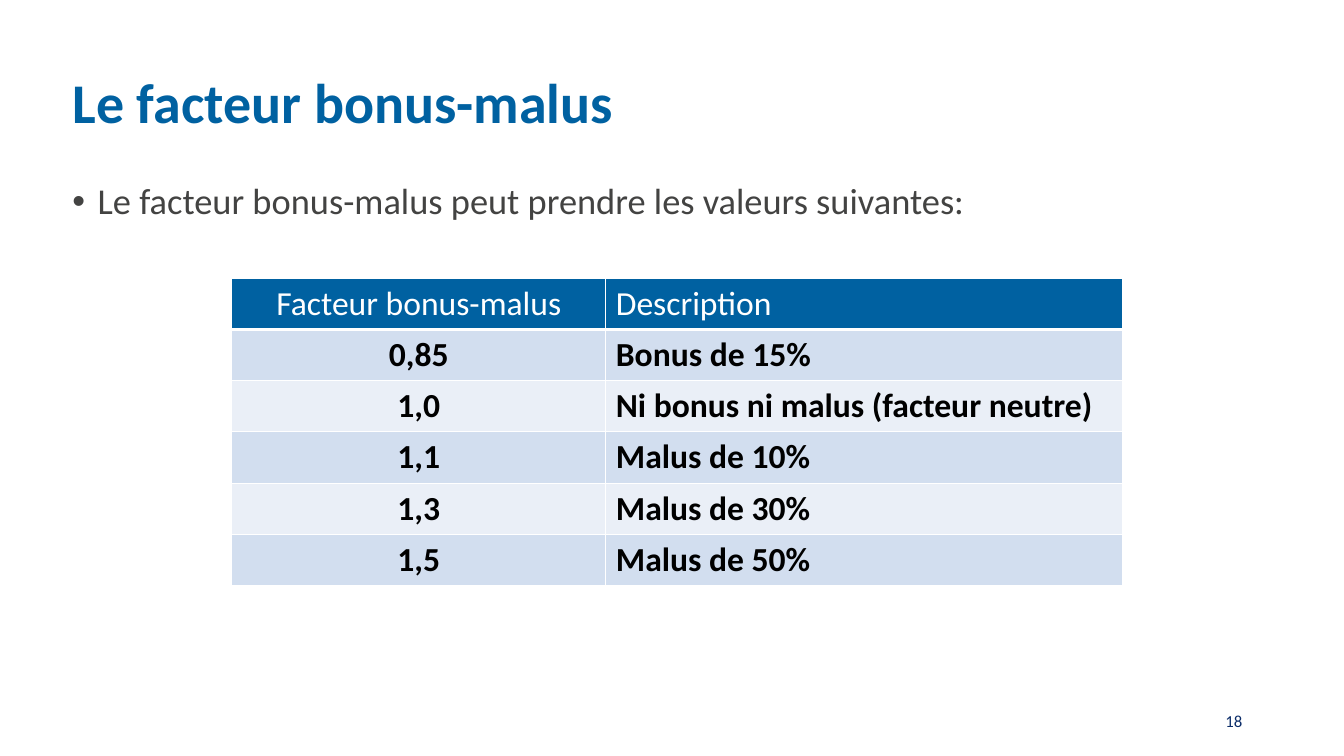
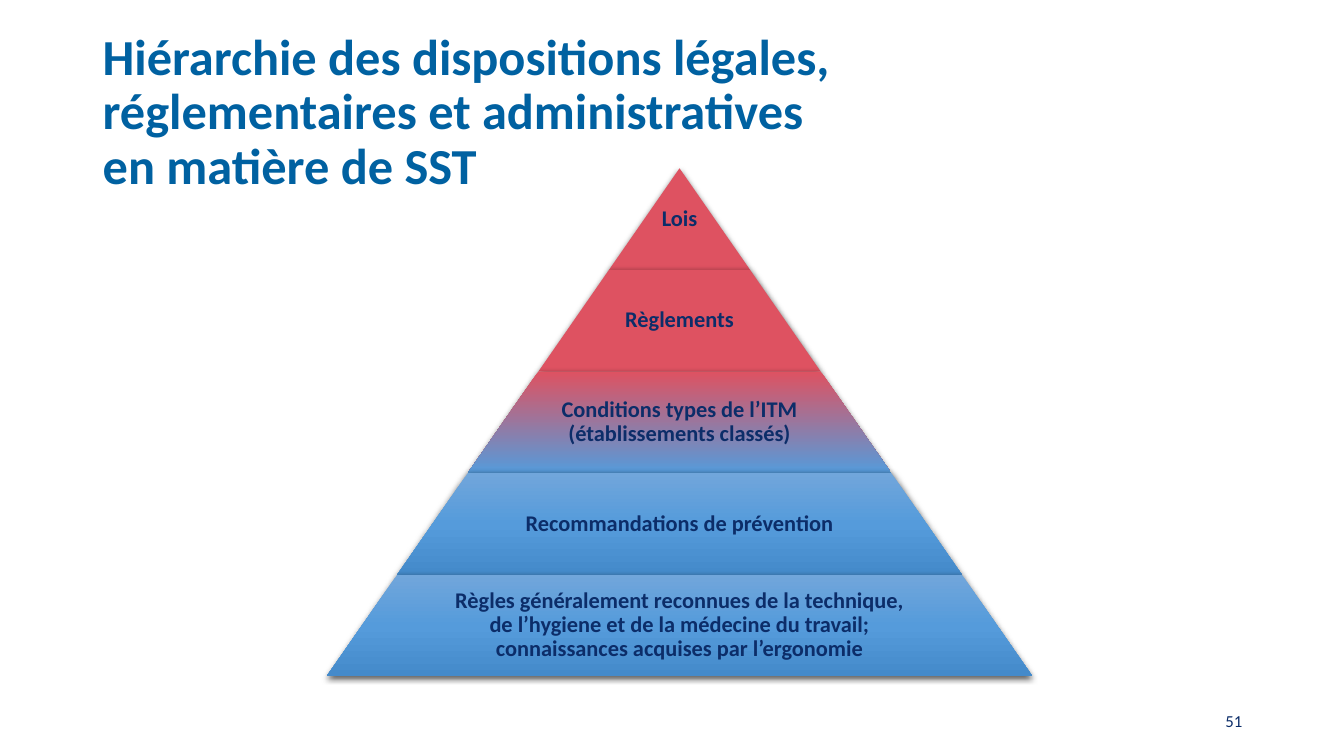
from pptx import Presentation
from pptx.dml.color import RGBColor
from pptx.enum.shapes import MSO_SHAPE as SHAPE
from pptx.enum.text import MSO_ANCHOR as ANCHOR, PP_ALIGN as ALIGN
from pptx.oxml import parse_xml
from pptx.oxml.ns import nsdecls
from pptx.util import Inches, Pt

COLORS = {
    "title": "0061A1", "body": "434342", "navy": "0C2D69",
    "white": "FFFFFF", "black": "000000",
    "band_dark": "D2DEEF", "band_light": "EAEFF7",
    "red": "DE5261", "blue_light": "71A6DB", "blue": "559BDB", "blue_dark": "448ACA",
}
FONT = "Calibri"
STYLES = {
    "title": {"size": Pt(40), "bold": True, "color": "title"},
    "long_title": {"size": Pt(36), "bold": True, "color": "title"},
    "body": {"size": Pt(26), "bold": False, "color": "body"},
    "header": {"size": Pt(24), "bold": False, "color": "white"},
    "cell": {"size": Pt(24), "bold": True, "color": "black"},
    "level": {"size": Pt(16), "bold": True, "color": "navy"},
    "number": {"size": Pt(12), "bold": False, "color": "navy"},
}
NUMBER_BOX = (9.42, 6.95, 3, 0.4)

FACTORS = [
    ("Facteur bonus-malus", "Description"),
    ("0,85", "Bonus de 15%"),
    ("1,0", "Ni bonus ni malus (facteur neutre)"),
    ("1,1", "Malus de 10%"),
    ("1,3", "Malus de 30%"),
    ("1,5", "Malus de 50%"),
]
BLUES = [(0, "blue_light"), (50, "blue"), (100, "blue_dark")]
# Each level: text, colour stops, text width as a share of the level
LEVELS = [
    ("Lois", [(0, "red")], 1),
    ("Règlements", [(0, "red")], 0.65),
    ("Conditions types de l’ITM (établissements classés)",
     [(0, "red"), (100, "blue")], 0.65),
    ("Recommandations de prévention", BLUES, 0.65),
    ("Règles généralement reconnues de la technique, de l’hygiene et de la "
     "médecine du travail; connaissances acquises par l’ergonomie", BLUES, 0.65),
]


def rgb(name):
    return RGBColor.from_string(COLORS[name])


def write(p, text, style, **paragraph_format):
    """Fill a paragraph with styled text."""
    p.text = text
    for name, value in paragraph_format.items():
        setattr(p, name, value)
    for r in p.runs:
        r.font.name = FONT
        for name, value in STYLES[style].items():
            if name == "color":
                r.font.color.rgb = rgb(value)
            else:
                setattr(r.font, name, value)


def add_text(slide, box, text, style, anchor=ANCHOR.MIDDLE, inset=None, **paragraph_format):
    tf = slide.shapes.add_textbox(*map(Inches, box)).text_frame
    tf.word_wrap = True
    tf.vertical_anchor = anchor
    if inset is not None:
        for side in ("left", "top", "right", "bottom"):
            setattr(tf, f"margin_{side}", Inches(inset))
    p = tf.paragraphs[0]
    write(p, text, style, **paragraph_format)
    return p


def add_slide(prs, title, title_box, style, number):
    """Blank slide with the shared title and slide number."""
    slide = prs.slides.add_slide(prs.slide_layouts[6])
    add_text(slide, title_box, title, style, line_spacing=0.9)
    add_text(slide, NUMBER_BOX, number, "number", alignment=ALIGN.RIGHT)
    return slide


def add_bullet(slide, box, text):
    p = add_text(slide, box, text, "body", ANCHOR.TOP,
                 alignment=ALIGN.JUSTIFY, line_spacing=0.9)
    pPr = p._p.get_or_add_pPr()
    pPr.set("marL", str(Inches(0.25)))
    pPr.set("indent", str(-Inches(0.25)))
    pPr.append(parse_xml(f'<a:buFont {nsdecls("a")} typeface="Arial"/>'))
    pPr.append(parse_xml(f'<a:buChar {nsdecls("a")} char="•"/>'))


def set_borders(cell, widths):
    tcPr = cell._tc.get_or_add_tcPr()
    for i, (side, width) in enumerate(widths.items()):
        tcPr.insert(i, parse_xml(
            f'<a:ln{side} {nsdecls("a")} w="{Pt(width)}"><a:solidFill>'
            f'<a:srgbClr val="{COLORS["white"]}"/></a:solidFill></a:ln{side}>'))


def add_factor_table(slide, box, rows, shares):
    table = slide.shapes.add_table(len(rows), len(shares), *map(Inches, box)).table
    table.horz_banding = False
    for col, share in zip(table.columns, shares):
        col.width = Inches(box[2] * share)
    for i, row in enumerate(rows):
        fill = "title" if i == 0 else "band_dark" if i % 2 else "band_light"
        for j, text in enumerate(row):
            cell = table.cell(i, j)
            cell.fill.solid()
            cell.fill.fore_color.rgb = rgb(fill)
            write(cell.text_frame.paragraphs[0], text, "cell" if i else "header",
                  alignment=ALIGN.LEFT if j else ALIGN.CENTER)
            set_borders(cell, {"L": 1, "R": 1, "T": 3 if i == 1 else 1,
                               "B": 1 if i else 3})


def paint(sp, stops):
    """Plain or vertical gradient fill, no outline, soft shadow below."""
    if len(stops) == 1:
        sp.fill.solid()
        sp.fill.fore_color.rgb = rgb(stops[0][1])
    else:
        marks = "".join(f'<a:gs pos="{pos * 1000}"><a:srgbClr val="{COLORS[name]}"/></a:gs>'
                        for pos, name in stops)
        sp._element.spPr.prstGeom.addnext(parse_xml(
            f'<a:gradFill {nsdecls("a")} rotWithShape="1"><a:gsLst>{marks}</a:gsLst>'
            '<a:lin ang="5400000" scaled="0"/></a:gradFill>'))
    sp.line.fill.background()
    sp.shadow.inherit = False
    sp._element.spPr.effectLst.append(parse_xml(
        f'<a:outerShdw {nsdecls("a")} blurRad="{Pt(4.5)}" dist="{Pt(1.5)}" dir="5400000" '
        f'algn="ctr" rotWithShape="0"><a:srgbClr val="{COLORS["black"]}">'
        '<a:alpha val="63000"/></a:srgbClr></a:outerShdw>'))


def add_pyramid(slide, box, levels):
    left, top, width, height = box
    level_h = height / len(levels)
    slope = width / 2 / len(levels)
    center = left + width / 2
    for i, (text, stops, share) in enumerate(levels):
        y, half = top + i * level_h, slope * (i + 1)
        sp = slide.shapes.add_shape(
            SHAPE.TRAPEZOID, *map(Inches, (center - half, y, 2 * half, level_h)))
        sp.adjustments[0] = slope / level_h
        paint(sp, stops)
        text_half = half * share
        add_text(slide, (center - text_half, y, 2 * text_half, level_h), text, "level",
                 inset=0.02, alignment=ALIGN.CENTER, line_spacing=0.9)


def factor_slide(prs):
    slide = add_slide(prs, "Le facteur bonus-malus", (0.62, 0.32, 11.5, 1.45), "title", "18")
    add_bullet(slide, (0.62, 1.77, 12.19, 5.04),
               "Le facteur bonus-malus peut prendre les valeurs suivantes:")
    add_factor_table(slide, (2.3, 2.76, 8.83, 3.05), FACTORS, (0.42, 0.58))


def hierarchy_slide(prs):
    title = ("Hiérarchie des dispositions légales,\vréglementaires et administratives"
             "\ven matière de SST")
    slide = add_slide(prs, title, (0.92, 0.4, 11.5, 1.45), "long_title", "51")
    add_pyramid(slide, (3.24, 1.67, 7, 5.04), LEVELS)


def main():
    prs = Presentation()
    prs.slide_width, prs.slide_height = Inches(13.33), Inches(7.5)
    factor_slide(prs)
    hierarchy_slide(prs)
    prs.save("out.pptx")


if __name__ == "__main__":
    main()
